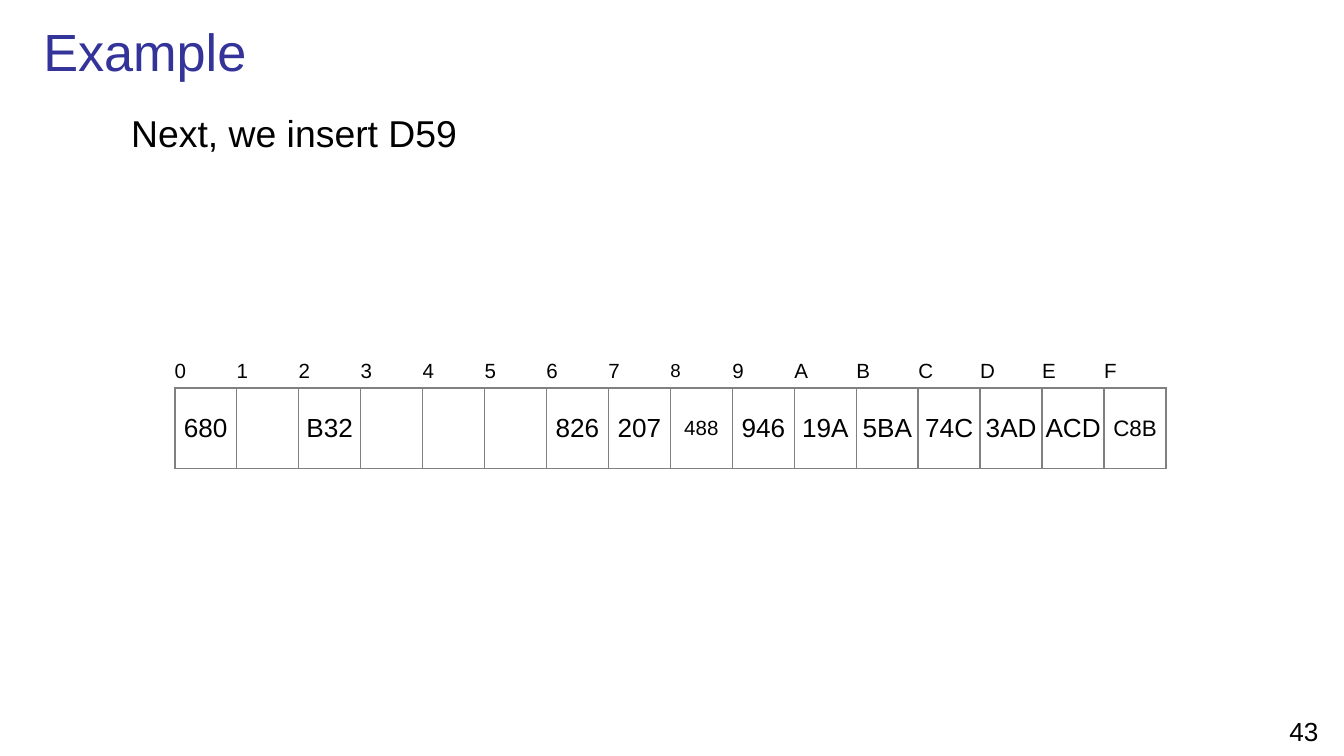
from lxml import etree
from pptx import Presentation
from pptx.dml.color import RGBColor
from pptx.enum import text
from pptx.oxml import ns
from pptx.util import Pt

BLACK = RGBColor(0x00, 0x00, 0x00)
INDIGO = RGBColor(0x33, 0x33, 0x99)
GREY = RGBColor(0x80, 0x80, 0x80)
NO_STYLE = "{2D5ABB26-0587-4C30-8999-92F81FD0307C}"


def add_run(p, words, size, color=BLACK, align=text.PP_ALIGN.LEFT):
    p.alignment = align
    r = p.add_run()
    r.text = words
    r.font.name = "Arial"
    r.font.size = Pt(size)
    r.font.color.rgb = color


def add_border(cell, sides):
    tcPr = cell._tc.get_or_add_tcPr()
    for side in sides:
        ln = etree.SubElement(tcPr, ns.qn(f"a:ln{side}"), w=str(Pt(1)))
        fill = etree.SubElement(ln, ns.qn("a:solidFill"))
        etree.SubElement(fill, ns.qn("a:srgbClr"), val=str(GREY))


prs = Presentation()
prs.slide_width, prs.slide_height = Pt(720), Pt(405)
s = prs.slides.add_slide(prs.slide_layouts[1])

# Title
title = s.shapes.title
title.left, title.top, title.width, title.height = Pt(16), Pt(6), Pt(701), Pt(42.5)
title.text_frame.vertical_anchor = text.MSO_ANCHOR.MIDDLE
add_run(title.text_frame.paragraphs[0], "Example", 28, INDIGO)

# Body: one indented line without a bullet
body = s.placeholders[1]
body.left, body.top, body.width, body.height = Pt(32), Pt(55.5), Pt(659.5), Pt(315)
p = body.text_frame.paragraphs[0]
p.space_before = Pt(4)
add_run(p, "Next, we insert D59", 20)
pPr = p._p.get_or_add_pPr()
pPr.set("marL", str(Pt(31)))
pPr.set("indent", "0")
etree.SubElement(pPr, ns.qn("a:buNone"))

# Hash table: bin index above, stored key below
bins = "0123456789ABCDEF"
keys = {"0": "680", "2": "B32", "6": "826", "7": "207", "8": "488", "9": "946",
        "A": "19A", "B": "5BA", "C": "74C", "D": "3AD", "E": "ACD", "F": "C8B"}
index_sizes = {"8": 10}
key_sizes = {"8": 11, "F": 12}
col_width = 33.2

frame = s.shapes.add_table(2, len(bins), Pt(93.6), Pt(190),
                           Pt(col_width * len(bins)), Pt(61))
table = frame.table
table.first_row = table.horz_banding = False
table._tbl.tblPr.find(ns.qn("a:tableStyleId")).text = NO_STYLE
table.rows[0].height, table.rows[1].height = Pt(18), Pt(43)

for col, label in enumerate(bins):
    table.columns[col].width = Pt(col_width)
    index_cell, key_cell = table.cell(0, col), table.cell(1, col)
    add_border(index_cell, "B")
    add_border(key_cell, "LRTB")
    for cell in (index_cell, key_cell):
        cell.fill.background()
        cell.vertical_anchor = text.MSO_ANCHOR.MIDDLE
        cell.margin_left = cell.margin_right = Pt(0)
        cell.margin_top = cell.margin_bottom = Pt(0)
    add_run(index_cell.text_frame.paragraphs[0], label, index_sizes.get(label, 11))
    if label in keys:
        add_run(key_cell.text_frame.paragraphs[0], keys[label],
                key_sizes.get(label, 14), align=text.PP_ALIGN.CENTER)

# Page number
number = s.shapes.add_textbox(Pt(677), Pt(379.5), Pt(43), Pt(21.5))
number.text_frame.word_wrap = True
add_run(number.text_frame.paragraphs[0], "43", 14, align=text.PP_ALIGN.CENTER)

prs.save("out.pptx")
